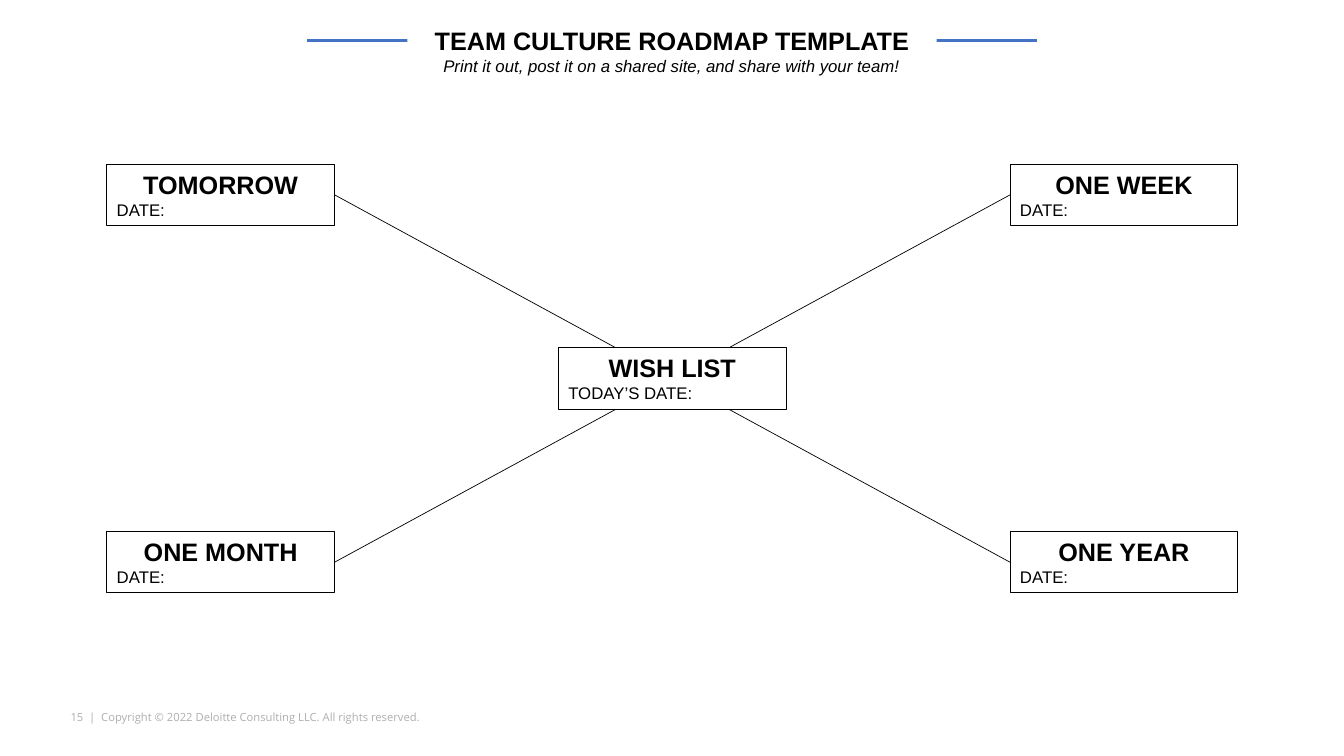
from lxml.etree import SubElement
from pptx import Presentation
from pptx.dml.color import RGBColor
from pptx.enum.shapes import MSO_CONNECTOR as Connector, MSO_SHAPE as Shape
from pptx.enum.text import MSO_ANCHOR as Anchor, MSO_AUTO_SIZE as AutoSize, PP_ALIGN as Align
from pptx.oxml.ns import qn
from pptx.util import Pt

COLORS = {"ink": "000000", "paper": "FFFFFF", "rule": "4472C4", "footer": "AEAEAE"}
CARD_WIDTH, CARD_HEIGHT = 162.7, 44
LEFT, RIGHT = 76.3, 721.5
TOP, BOTTOM = 117.2, 379.6
LEFT_SIDE, RIGHT_SIDE = 1, 3


def color(name):
    return RGBColor.from_string(COLORS[name])


def write(para, text, size=12, font="Arial", ink="ink", bold=False, italic=False,
          align=Align.LEFT):
    para.alignment = align
    span = para.add_run()
    span.text = text
    span.font.name = font
    span.font.size = Pt(size)
    span.font.bold = bold
    span.font.italic = italic
    span.font.color.rgb = color(ink)


class Page:
    """The current slide and the style of its elements."""

    def __init__(self, deck):
        self.slide = deck.slides.add_slide(deck.slide_layouts[5])
        self.shapes = self.slide.shapes

    def frame(self, box, wrap=True, margins=(7.2, 3.6)):
        frame = box.text_frame
        frame.word_wrap = wrap
        frame.auto_size = AutoSize.NONE
        frame.vertical_anchor = Anchor.TOP
        frame.margin_left = frame.margin_right = Pt(margins[0])
        frame.margin_top = frame.margin_bottom = Pt(margins[1])
        return frame

    def line(self, start, end, ink="ink", width=0.5):
        line = self.shapes.add_connector(Connector.STRAIGHT, *map(Pt, start + end))
        line.line.color.rgb = color(ink)
        line.line.width = Pt(width)
        SubElement(line._element.spPr, qn("a:effectLst"))
        return line

    def link(self, left_card, right_card):
        line = self.line((0, 0), (0, 0))
        line.begin_connect(left_card, RIGHT_SIDE)
        line.end_connect(right_card, LEFT_SIDE)

    def title(self, text, left, top, width, height):
        """Place the title in front of the rule, so that it hides the rule's middle."""
        box = self.shapes.title
        box.left, box.top, box.width, box.height = map(Pt, (left, top, width, height))
        box.fill.solid()
        box.fill.fore_color.rgb = color("paper")
        write(self.frame(box).paragraphs[0], text, size=18, bold=True, align=Align.CENTER)
        self.shapes._spTree.append(box._element)

    def label(self, text, left, top, width, height, margins=(7.2, 3.6), **style):
        box = self.shapes.add_textbox(*map(Pt, (left, top, width, height)))
        write(self.frame(box, wrap=False, margins=margins).paragraphs[0], text, **style)

    def card(self, heading, left, top, date="DATE:", filled=False):
        box = self.shapes.add_shape(
            Shape.RECTANGLE, *map(Pt, (left, top, CARD_WIDTH, CARD_HEIGHT)))
        box.shadow.inherit = False
        if filled:
            box.fill.solid()
            box.fill.fore_color.rgb = color("paper")
        else:
            box.fill.background()
        box.line.color.rgb = color("ink")
        box.line.width = Pt(0.75)
        frame = self.frame(box)
        write(frame.paragraphs[0], heading, size=18, bold=True, align=Align.CENTER)
        write(frame.add_paragraph(), date)
        return box


def main():
    deck = Presentation()
    deck.slide_width, deck.slide_height = Pt(960), Pt(540)
    page = Page(deck)

    page.line((219.3, 29.2), (741, 29.2), ink="rule", width=2.25)
    page.title("TEAM CULTURE ROADMAP TEMPLATE", 291, 14.6, 378, 29)
    page.label("Print it out, post it on a shared site, and share with your team!",
               308, 36.2, 343.5, 21.8, italic=True, align=Align.CENTER)

    tomorrow = page.card("TOMORROW", LEFT, TOP)
    week = page.card("ONE WEEK", RIGHT, TOP)
    month = page.card("ONE MONTH", LEFT, BOTTOM)
    year = page.card("ONE YEAR", RIGHT, BOTTOM)
    page.link(tomorrow, year)
    page.link(month, week)
    page.card("WISH LIST", (LEFT + RIGHT) / 2, (TOP + BOTTOM) / 2,
              date="TODAY’S DATE:", filled=True)

    page.label("15  |  Copyright © 2022 Deloitte Consulting LLC. All rights reserved.",
               50.4, 507.6, 251.3, 9.4, margins=(0, 0), size=8, font="Open Sans", ink="footer")
    deck.save("out.pptx")


if __name__ == "__main__":
    main()
